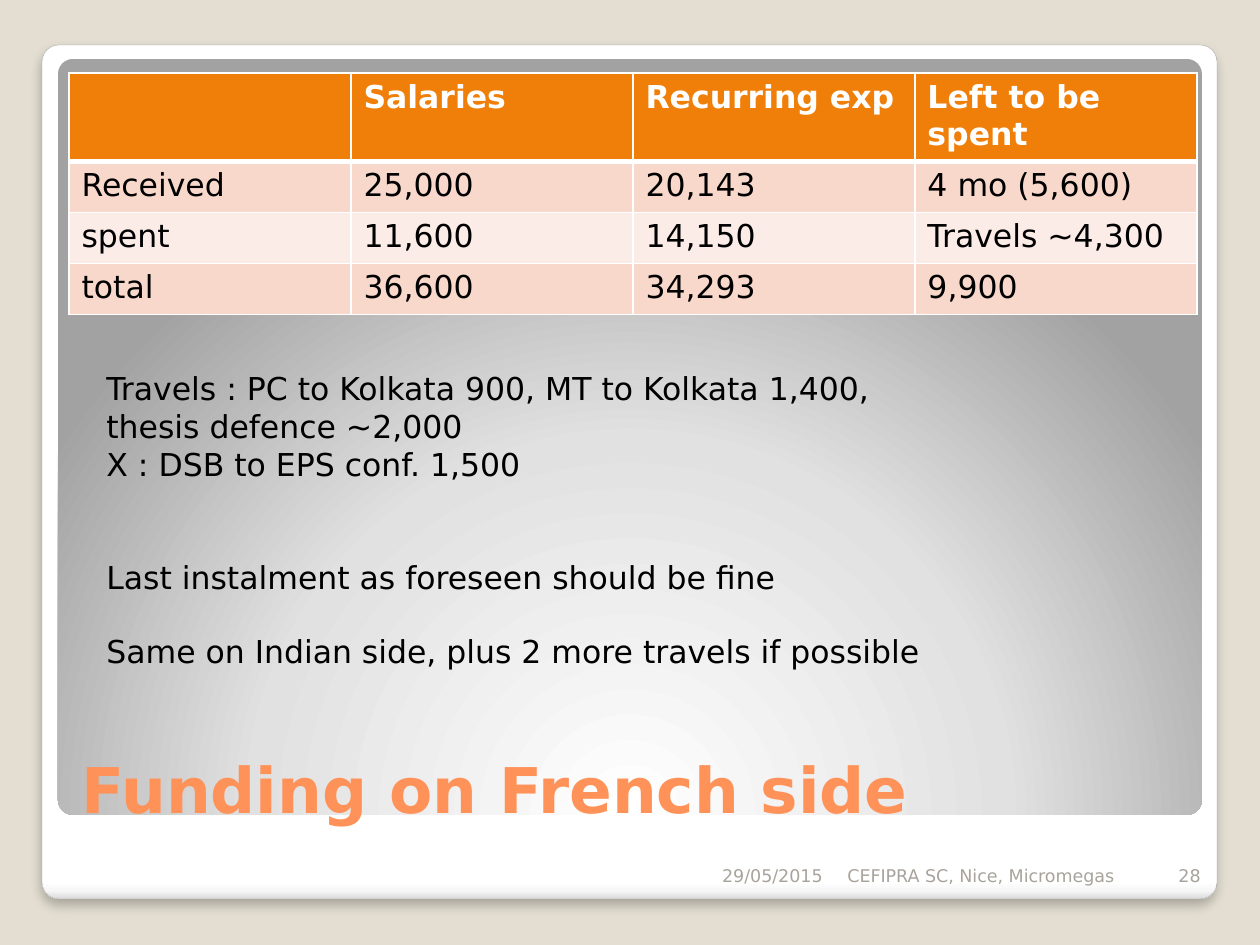
from dataclasses import dataclass
from pptx import Presentation
from pptx.dml.color import RGBColor
from pptx.enum.shapes import MSO_SHAPE
from pptx.enum.text import MSO_ANCHOR, PP_ALIGN
from pptx.oxml import parse_xml
from pptx.oxml.ns import nsdecls, qn
from pptx.util import Pt

ROUND = MSO_SHAPE.ROUNDED_RECTANGLE
TOP, BOTTOM = MSO_ANCHOR.TOP, MSO_ANCHOR.BOTTOM
LEFT, RIGHT = PP_ALIGN.LEFT, PP_ALIGN.RIGHT
SCALE = 914400 / 126


@dataclass(frozen=True)
class Theme:
    """Colours, font and type sizes."""
    font: str = "DejaVu Sans"
    back: str = "E3DED1"
    edge: str = "A4A4A4"
    white: str = "FFFFFF"
    ink: str = "000000"
    title: str = "FF9258"
    muted: str = "A8A49B"
    head: str = "F07F09"
    bands: tuple = ("F9D8CC", "FCECE7")
    card: tuple = ((0, "FFFFFF"), (98, "FFFFFF"), (99, "F7F7F7"), (100, "DADADA"))
    glow: tuple = ((0, "FFFFFF"), (55, "E1E1E1"), (100, "A2A2A2"))
    big: int = 36
    body: int = 18
    small: int = 10


THEME = Theme()
DOWN = '<a:lin ang="5400000" scaled="0"/>'
RADIAL = ('<a:path path="circle"><a:fillToRect l="50000" t="175000" '
          'r="50000" b="-75000"/></a:path>')
ROWS = (
    ("", "Salaries", "Recurring exp", "Left to be spent"),
    ("Received", "25,000", "20,143", "4 mo (5,600)"),
    ("spent", "11,600", "14,150", "Travels ~4,300"),
    ("total", "36,600", "34,293", "9,900"),
)
NOTES = (
    ("Travels : PC to Kolkata 900, MT to Kolkata 1,400, thesis defence ~2,000", 0),
    ("X : DSB to EPS conf. 1,500", 0),
    ("Last instalment as foreseen should be fine", 43),
    ("Same on Indian side, plus 2 more travels if possible", 21),
)


def px(size):
    """Turn px into EMU."""
    return round(size * SCALE)


def place(box):
    """Turn a px box into EMU."""
    return [px(size) for size in box]


def write(para, text, size, color, bold=False):
    """Add one styled run."""
    run = para.add_run()
    run.text = text
    font = run.font
    font.name, font.size, font.bold = THEME.font, Pt(size), bold
    font.color.rgb = RGBColor.from_string(color)


def label(slide, box, items, size, color, bold=False, align=LEFT, anchor=BOTTOM):
    """Add a text box of (text, space before) items."""
    frame = slide.shapes.add_textbox(*place(box)).text_frame
    frame.word_wrap = True
    frame.vertical_anchor = anchor
    for i, (text, gap) in enumerate(items):
        para = frame.add_paragraph() if i else frame.paragraphs[0]
        para.alignment = align
        para.space_before = Pt(gap)
        write(para, text, size, color, bold)


def panel(slide, box, stops, course):
    """Add a rounded panel with a gradient."""
    shape = slide.shapes.add_shape(ROUND, *place(box))
    shape.adjustments[0] = 0.02
    shape.shadow.inherit = False
    shape.line.fill.background()
    marks = "".join(f'<a:gs pos="{pos * 1000}"><a:srgbClr val="{color}"/></a:gs>'
                    for pos, color in stops)
    fill = parse_xml(f'<a:gradFill {nsdecls("a")} rotWithShape="1">'
                     f'<a:gsLst>{marks}</a:gsLst>{course}</a:gradFill>')
    shape._element.spPr.find(qn("a:prstGeom")).addnext(fill)
    return shape


def frame(slide, box):
    """Draw the white card and the grey panel inside it."""
    left, top, width, height = box
    card = panel(slide, box, THEME.card, DOWN)
    card.line.color.rgb = RGBColor.from_string(THEME.edge)
    card.line.width = Pt(0.16)
    card._element.spPr.find(qn("a:effectLst")).append(parse_xml(
        f'<a:outerShdw {nsdecls("a")} blurRad="{Pt(6)}" dist="{Pt(4)}" '
        f'dir="5400000" algn="t" rotWithShape="0"><a:srgbClr val="{THEME.ink}">'
        '<a:alpha val="25000"/></a:srgbClr></a:outerShdw>'))
    panel(slide, (left + 16, top + 14, width - 31, height - 98), THEME.glow, RADIAL)


def border(cell, base):
    """Draw white cell borders, with the given bottom width."""
    props = cell._tc.get_or_add_tcPr()
    for i, (side, wide) in enumerate(zip("LRTB", (1, 1, 1, base))):
        props.insert(i, parse_xml(
            f'<a:ln{side} {nsdecls("a")} w="{Pt(wide)}"><a:solidFill>'
            f'<a:srgbClr val="{THEME.white}"/></a:solidFill></a:ln{side}>'))


def budget(slide, box):
    """Add the funding table."""
    height = box[3]
    count = len(ROWS[0])
    table = slide.shapes.add_table(len(ROWS), count, *place(box)).table
    table.horz_banding = False
    low = 51
    for col in table.columns:
        col.width = px(box[2] // count)
    for r, texts in enumerate(ROWS):
        table.rows[r].height = px(low if r else height - low * (len(ROWS) - 1))
        for c, text in enumerate(texts):
            cell = table.cell(r, c)
            cell.fill.solid()
            tint = THEME.bands[(r - 1) % 2] if r else THEME.head
            cell.fill.fore_color.rgb = RGBColor.from_string(tint)
            border(cell, 1 if r else 3)
            if text:
                write(cell.text_frame.paragraphs[0], text, THEME.body,
                      THEME.ink if r else THEME.white, not r)


def footer(slide, box):
    """Add date, event and page number in a row."""
    left, top, _, height = box
    parts = (("29/05/2015", 315, RIGHT), ("CEFIPRA SC, Nice, Micromegas", 315, LEFT),
             ("28", 63, RIGHT))
    for text, width, align in parts:
        label(slide, (left, top, width, height), [(text, 0)],
              THEME.small, THEME.muted, align=align)
        left += width


def main():
    """Build and save the slide."""
    deck = Presentation()
    deck.slide_width, deck.slide_height = px(1260), px(945)
    slide = deck.slides.add_slide(deck.slide_layouts[6])
    back = slide.background.fill
    back.solid()
    back.fore_color.rgb = RGBColor.from_string(THEME.back)
    frame(slide, (42, 45, 1175, 854))
    label(slide, (69, 687, 1128, 145), [("Funding on French side", 0)],
          THEME.big, THEME.title, bold=True)
    budget(slide, (69, 73, 1128, 239))
    footer(slide, (520, 842, 693, 50))
    label(slide, (94, 363, 863, 318), NOTES, THEME.body, THEME.ink, anchor=TOP)
    deck.save("out.pptx")


if __name__ == "__main__":
    main()
